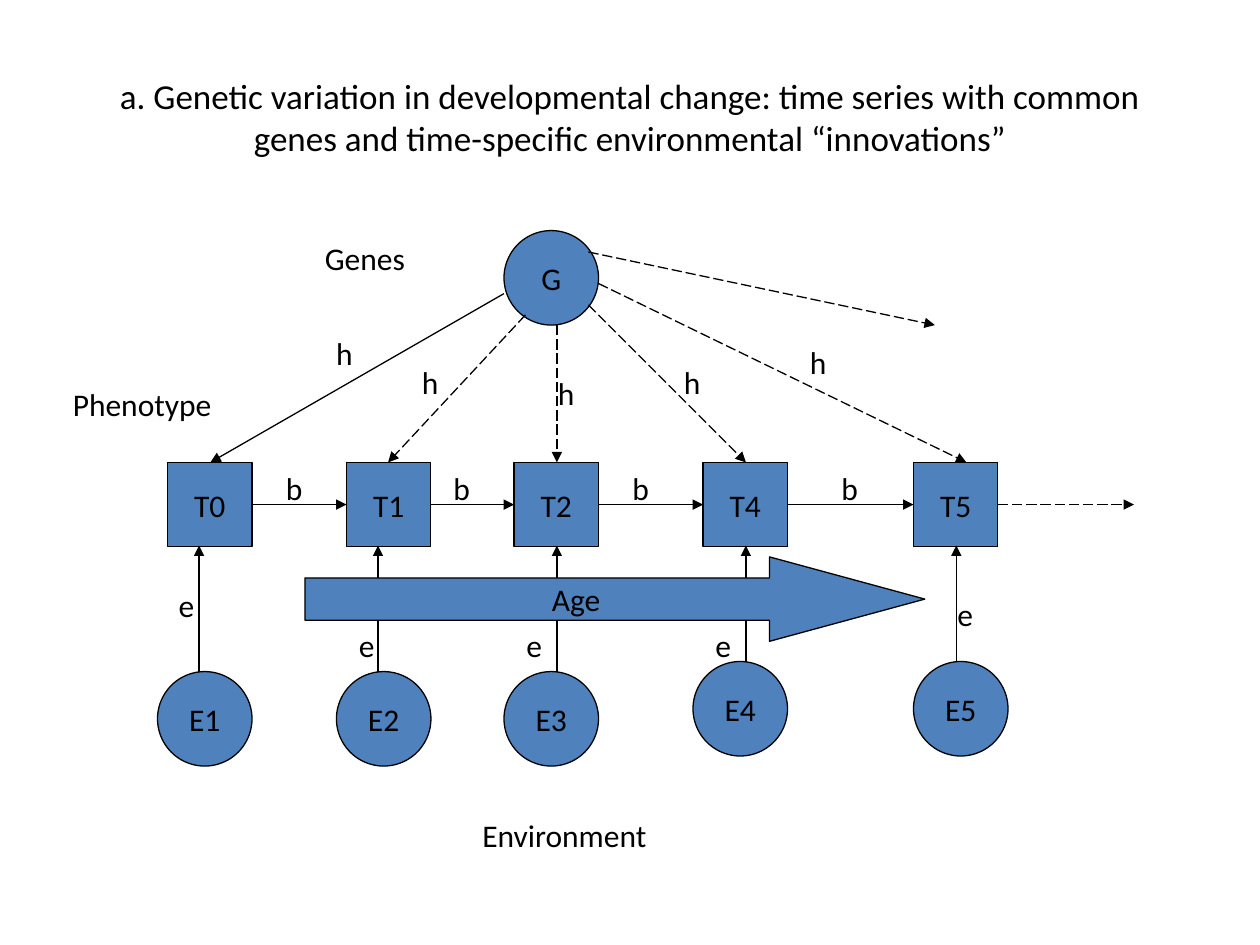
from lxml.etree import SubElement
from pptx import Presentation
from pptx.dml.color import RGBColor
from pptx.enum.dml import MSO_LINE
from pptx.enum.shapes import MSO_CONNECTOR, MSO_SHAPE
from pptx.enum.text import MSO_ANCHOR, PP_ALIGN
from pptx.oxml.ns import qn
from pptx.util import Inches, Pt

COLORS = {"fill": "4F81BD", "line": "000000", "text": "000000"}
FONT = "Calibri"
SQUARE = 0.67
CIRCLE = 0.75
COLUMNS = [0, 1.42, 2.75, 4.25, 5.92]


def write_text(shape, text, size=18, align=PP_ALIGN.LEFT, anchor=MSO_ANCHOR.TOP, wrap=True):
    """Fill a shape with one formatted paragraph."""
    frame = shape.text_frame
    frame.word_wrap = wrap
    frame.vertical_anchor = anchor
    paragraph = frame.paragraphs[0]
    paragraph.alignment = align
    run = paragraph.add_run()
    run.text = text
    run.font.name = FONT
    run.font.size = Pt(size)
    run.font.color.rgb = RGBColor.from_string(COLORS["text"])


def add_label(slide, text, left, top, width=0.36, height=0.43, **text_format):
    """Add a text box."""
    label = slide.shapes.add_textbox(Inches(left), Inches(top), Inches(width), Inches(height))
    write_text(label, text, **text_format)


def add_node(slide, kind, text, left, top, width, height):
    """Add a filled, outlined shape with centred text."""
    node = slide.shapes.add_shape(kind, Inches(left), Inches(top), Inches(width), Inches(height))
    node.shadow.inherit = False
    node.fill.solid()
    node.fill.fore_color.rgb = RGBColor.from_string(COLORS["fill"])
    node.line.color.rgb = RGBColor.from_string(COLORS["line"])
    node.line.width = Pt(0.75)
    write_text(node, text, align=PP_ALIGN.CENTER, anchor=MSO_ANCHOR.MIDDLE, wrap=False)
    return node


def add_arrow(slide, start, end, dashed=False):
    """Add a thin line with an arrowhead at its end."""
    points = [Inches(value) for value in (*start, *end)]
    arrow = slide.shapes.add_connector(MSO_CONNECTOR.STRAIGHT, *points)
    arrow.line.color.rgb = RGBColor.from_string(COLORS["line"])
    arrow.line.width = Pt(0.75)
    if dashed:
        arrow.line.dash_style = MSO_LINE.LONG_DASH
    SubElement(arrow.line._get_or_add_ln(), qn("a:tailEnd"), type="triangle")
    SubElement(arrow._element.spPr, qn("a:effectLst"))


def add_title(slide, left, top, width, height):
    """Add the slide heading."""
    text = ("a. Genetic variation in developmental change: time series with common genes "
            "and time-specific environmental “innovations”")
    add_label(slide, text, left, top, width, height,
              size=20, align=PP_ALIGN.CENTER, anchor=MSO_ANCHOR.MIDDLE)


def add_genes(slide, left, top, height):
    """Add the gene node with its paths down to the phenotypes."""
    add_node(slide, MSO_SHAPE.OVAL, "G", left + 2.33, top, CIRCLE, CIRCLE)
    paths = [
        ((2.33, 0.5), (0, height)),
        ((2.5, 0.67), (1.41, height)),
        ((2.75, 0.75), (2.75, height)),
        ((3, 0.59), (4.25, height)),
        ((3.08, 0.42), (6, height)),
        ((3, 0.17), (5.75, 0.75)),
    ]
    for index, (start, end) in enumerate(paths):
        add_arrow(slide, (left + start[0], top + start[1]),
                  (left + end[0], top + end[1]), dashed=index > 0)
    for x, y in [(0.9, 0.77), (1.58, 1), (2.66, 1.09), (3.66, 1), (4.66, 0.84)]:
        add_label(slide, "h", left + x, top + y)
    add_label(slide, "Genes", left + 0.81, top + 0.02, 1.02)


def add_phenotypes(slide, left, top):
    """Add the time series of phenotypes."""
    add_label(slide, "Phenotype", left, top, 1.53)
    row_left, row_top = left + 0.85, top + 0.66
    middle = row_top + SQUARE / 2
    for text, x in zip(["T0", "T1", "T2", "T4", "T5"], COLUMNS):
        add_node(slide, MSO_SHAPE.RECTANGLE, text, row_left + x, row_top, SQUARE, SQUARE)
    for x, next_x in zip(COLUMNS, COLUMNS[1:] + [7.67]):
        add_arrow(slide, (row_left + x + SQUARE, middle), (row_left + next_x, middle),
                  dashed=x == COLUMNS[-1])
    for x in [0.84, 2.17, 3.59, 5.25]:
        add_label(slide, "b", row_left + x, row_top)


def add_environment(slide, left, top):
    """Add the environment nodes, their upward paths and the age arrow."""
    nodes = [
        ("E1", 0, 1, 0.07, 0.27),
        ("E2", 1.42, 1, 1.5, 0.59),
        ("E3", 2.75, 1, 2.83, 0.59),
        ("E4", 4.25, 0.92, 4.33, 0.59),
        ("E5", 6, 0.92, 6.25, 0.34),
    ]
    for (text, x, y, _, _), column in zip(nodes, COLUMNS):
        path_x = left + column + 0.42 - (0.09 if column < 2 else 0)
        add_node(slide, MSO_SHAPE.OVAL, text, left + x, top + y, CIRCLE, CIRCLE)
        add_arrow(slide, (path_x, top + y), (path_x, top))
    age = add_node(slide, MSO_SHAPE.RIGHT_ARROW, "Age", left + 1.17, top + 0.09, 4.92, SQUARE)
    age.adjustments[0] = 0.5
    age.adjustments[1] = 1.84
    for _, _, _, x, y in nodes:
        add_label(slide, "e", left + x, top + y)
    add_label(slide, "Environment", left + 2.48, top + 2.1, 1.76)


def main():
    """Build the slide and save it."""
    presentation = Presentation()
    presentation.slide_width = Inches(10)
    presentation.slide_height = Inches(7.5)
    slide = presentation.slides.add_slide(presentation.slide_layouts[6])
    add_title(slide, 0.5, 0.3, 9, 1.25)
    add_genes(slide, 1.67, 1.83, 1.84)
    add_phenotypes(slide, 0.48, 3.01)
    add_environment(slide, 1.25, 4.33)
    presentation.save("out.pptx")


if __name__ == "__main__":
    main()
